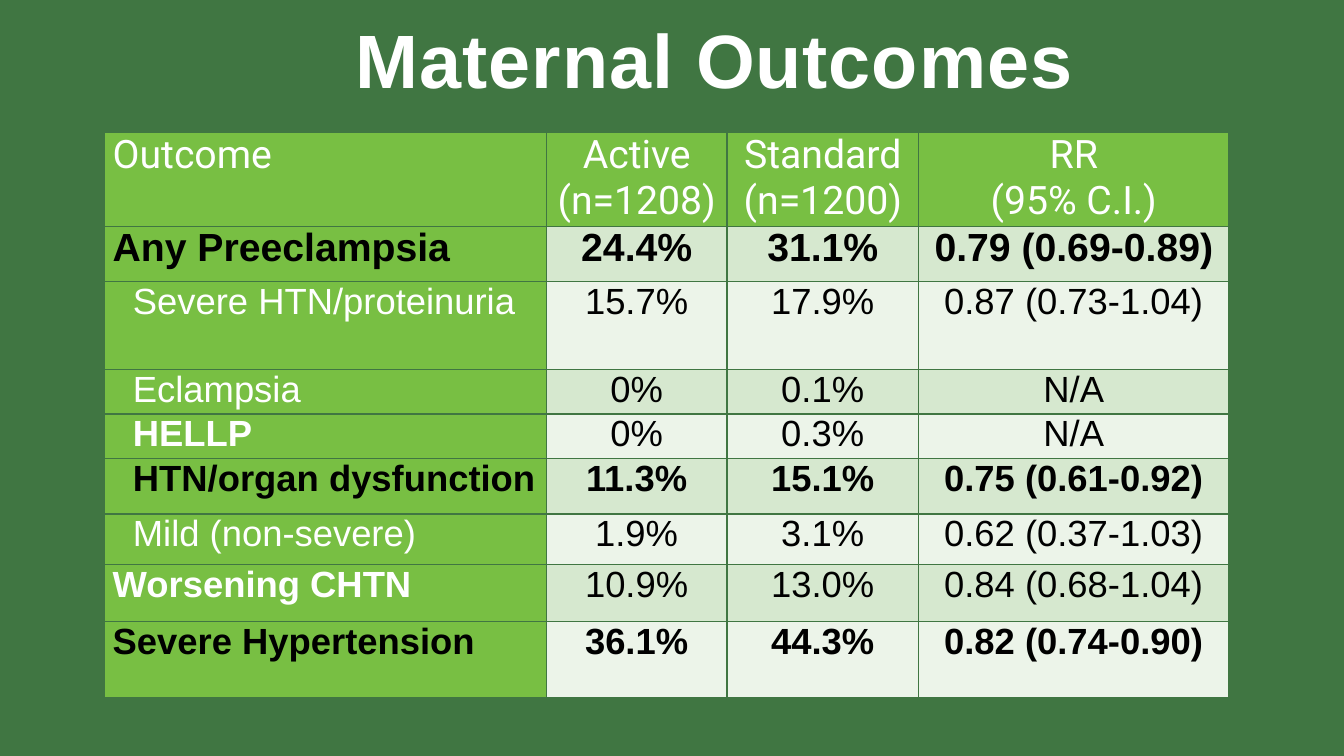
"""Build the maternal outcomes slide."""
from dataclasses import dataclass

from lxml.etree import SubElement
from pptx import Presentation
from pptx.dml.color import RGBColor
from pptx.enum.text import MSO_ANCHOR, PP_ALIGN
from pptx.oxml.ns import qn
from pptx.util import Cm, Pt


@dataclass(frozen=True)
class Theme:
    """Colours, fonts, type sizes and cell spacing."""
    background: str = "407642"
    accent: str = "78BF43"
    dark_band: str = "D6E8CF"
    light_band: str = "ECF4E9"
    white: str = "FFFFFF"
    black: str = "000000"
    heading_font: str = "Roboto"
    body_font: str = "Arial"
    title_size: int = 54
    large_size: int = 28
    body_size: int = 26
    border_width: int = 1
    cell_margin: float = 0.2
    indent: float = 0.51


@dataclass(frozen=True)
class Outcome:
    """One outcome row and its emphasis."""
    label: str
    values: tuple
    height: float
    indented: bool = False
    bold_label: bool = False
    significant: bool = False
    size: int = Theme.body_size


THEME = Theme()
COLUMN_WIDTHS = (11.13, 4.55, 4.83, 7.82)
HEADER_HEIGHT = 2.36
HEADINGS = ("Outcome", "Active (n=1208)", "Standard (n=1200)", "RR\n(95% C.I.)")
OUTCOMES = (
    Outcome("Any Preeclampsia", ("24.4%", "31.1%", "0.79 (0.69-0.89)"), 1.4,
            significant=True, size=THEME.large_size),
    Outcome("Severe HTN/proteinuria", ("15.7%", "17.9%", "0.87 (0.73-1.04)"), 2.21, indented=True),
    Outcome("Eclampsia", ("0%", "0.1%", "N/A"), 1.12, indented=True),
    Outcome("HELLP", ("0%", "0.3%", "N/A"), 1.12, indented=True, bold_label=True),
    Outcome("HTN/organ dysfunction", ("11.3%", "15.1%", "0.75 (0.61-0.92)"), 1.4,
            indented=True, significant=True),
    Outcome("Mild (non-severe)", ("1.9%", "3.1%", "0.62 (0.37-1.03)"), 1.27, indented=True),
    Outcome("Worsening CHTN", ("10.9%", "13.0%", "0.84 (0.68-1.04)"), 1.45, bold_label=True),
    Outcome("Severe Hypertension", ("36.1%", "44.3%", "0.82 (0.74-0.90)"), 1.9, significant=True),
)


def write_text(frame, text, *, size, color, font=THEME.body_font, bold=False,
               align=PP_ALIGN.LEFT, spacing=0):
    """Write each line of text as a formatted paragraph."""
    frame.word_wrap = True
    for index, line in enumerate(text.split("\n")):
        paragraph = frame.add_paragraph() if index else frame.paragraphs[0]
        paragraph.alignment = align
        run = paragraph.add_run()
        run.text = line
        run.font.name = font
        run.font.size = Pt(size)
        run.font.bold = bold
        run.font.color.rgb = RGBColor.from_string(color)
        if spacing:
            run.font._element.set("spc", str(round(spacing * 100)))


def style_cell(cell, fill, indent=0):
    """Set the margins, borders and fill of a cell."""
    cell.margin_left = Cm(THEME.cell_margin + indent)
    cell.margin_right = Cm(THEME.cell_margin)
    cell.margin_top = cell.margin_bottom = 0
    cell.vertical_anchor = MSO_ANCHOR.TOP
    properties = cell._tc.get_or_add_tcPr()
    for side in ("a:lnL", "a:lnR", "a:lnT", "a:lnB"):
        border = SubElement(properties, qn(side), w=str(Pt(THEME.border_width)))
        solid = SubElement(border, qn("a:solidFill"))
        SubElement(solid, qn("a:srgbClr"), val=THEME.background)
    cell.fill.solid()
    cell.fill.fore_color.rgb = RGBColor.from_string(fill)


def add_title(slide, left, top, width, height):
    """Place the slide title in the given box."""
    frame = slide.shapes.add_textbox(Cm(left), Cm(top), Cm(width), Cm(height)).text_frame
    frame.margin_top = Cm(0.33)
    frame.vertical_anchor = MSO_ANCHOR.TOP
    write_text(frame, "Maternal Outcomes", size=THEME.title_size, color=THEME.white,
               bold=True, align=PP_ALIGN.CENTER, spacing=0.7)


def add_outcomes_table(slide, left, top, width, height):
    """Place the outcomes table in the given box."""
    table = slide.shapes.add_table(len(OUTCOMES) + 1, len(COLUMN_WIDTHS),
                                   Cm(left), Cm(top), Cm(width), Cm(height)).table
    table.first_row = table.horz_banding = False
    for column, column_width in zip(table.columns, COLUMN_WIDTHS):
        column.width = Cm(column_width)
    row_heights = [HEADER_HEIGHT] + [outcome.height for outcome in OUTCOMES]
    for row, row_height in zip(table.rows, row_heights):
        row.height = Cm(row_height)

    for column_index, heading in enumerate(HEADINGS):
        cell = table.cell(0, column_index)
        style_cell(cell, THEME.accent)
        write_text(cell.text_frame, heading, size=THEME.large_size, color=THEME.white,
                   font=THEME.heading_font,
                   align=PP_ALIGN.CENTER if column_index else PP_ALIGN.LEFT)

    for row_index, outcome in enumerate(OUTCOMES, start=1):
        label = table.cell(row_index, 0)
        style_cell(label, THEME.accent, THEME.indent if outcome.indented else 0)
        write_text(label.text_frame, outcome.label, size=outcome.size,
                   color=THEME.black if outcome.significant else THEME.white,
                   bold=outcome.significant or outcome.bold_label)
        band = THEME.dark_band if row_index % 2 else THEME.light_band
        for column_index, value in enumerate(outcome.values, start=1):
            cell = table.cell(row_index, column_index)
            style_cell(cell, band)
            write_text(cell.text_frame, value, size=outcome.size, color=THEME.black,
                       bold=outcome.significant, align=PP_ALIGN.CENTER)


def main():
    """Create and save the presentation."""
    presentation = Presentation()
    presentation.slide_width, presentation.slide_height = Cm(33.87), Cm(19.05)
    slide = presentation.slides.add_slide(presentation.slide_layouts[6])
    slide.background.fill.solid()
    slide.background.fill.fore_color.rgb = RGBColor.from_string(THEME.background)
    add_title(slide, 5.87, 0, 24.28, 3.18)
    table_height = HEADER_HEIGHT + sum(outcome.height for outcome in OUTCOMES)
    add_outcomes_table(slide, 2.64, 3.33, sum(COLUMN_WIDTHS), table_height)
    presentation.save("out.pptx")


if __name__ == "__main__":
    main()
